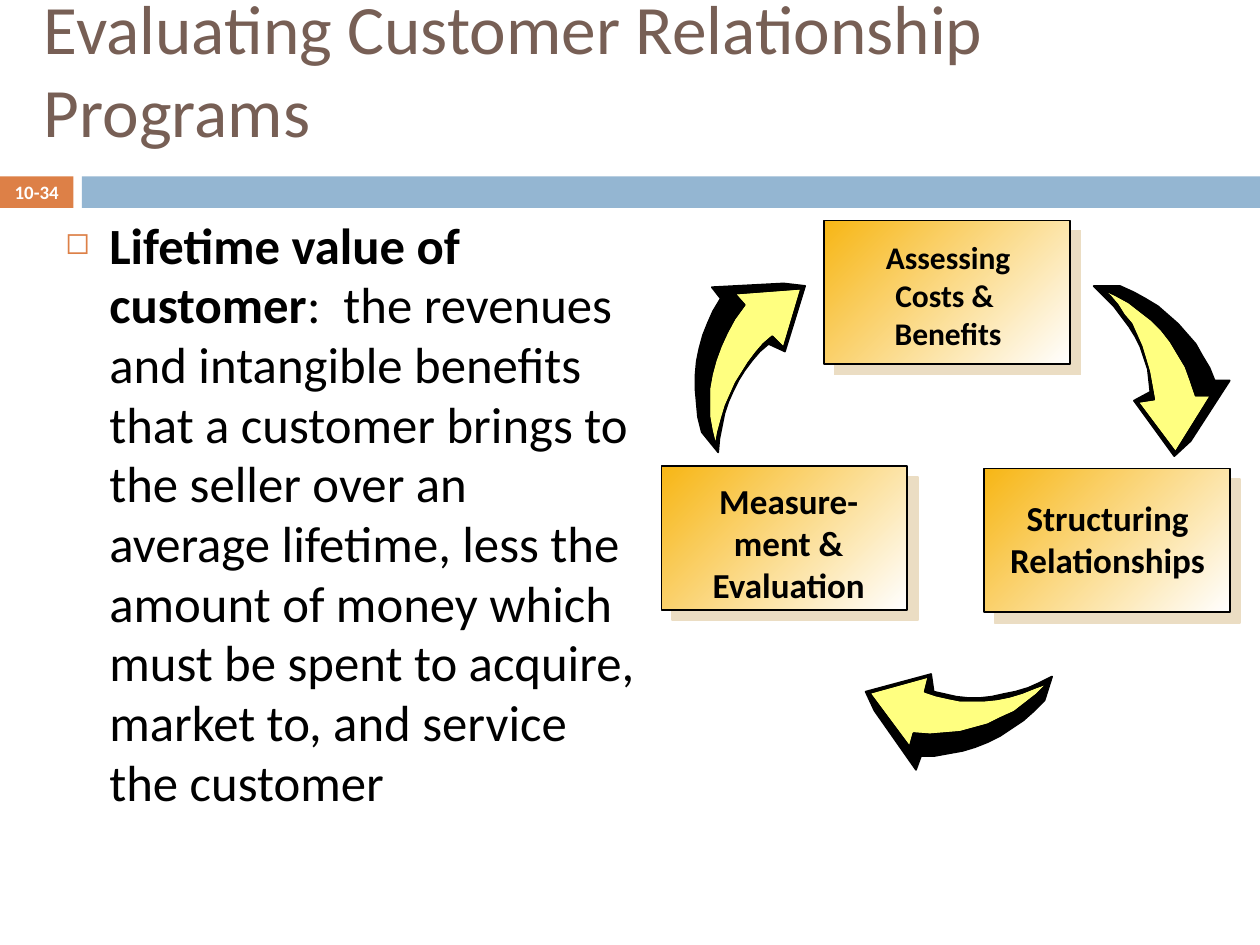
"""Build the slide on evaluating customer relationship programs."""
from dataclasses import dataclass

import pptx
import pptx.dml.color
import pptx.enum.shapes
import pptx.enum.text
import pptx.oxml
import pptx.oxml.ns
import pptx.util
from lxml import etree

Pt = pptx.util.Pt
RGBColor = pptx.dml.color.RGBColor
PP_ALIGN = pptx.enum.text.PP_ALIGN
MSO_ANCHOR = pptx.enum.text.MSO_ANCHOR
RECTANGLE = pptx.enum.shapes.MSO_SHAPE.RECTANGLE

ORANGE = RGBColor(0xDD, 0x80, 0x47)
BLUE = RGBColor(0x94, 0xB6, 0xD2)
BROWN = RGBColor(0x77, 0x5F, 0x55)
GOLD = RGBColor(0xF7, 0xB6, 0x15)
SAND = RGBColor(0xEB, 0xDD, 0xC3)
YELLOW = RGBColor(0xFF, 0xFF, 0x80)
WHITE = RGBColor(0xFF, 0xFF, 0xFF)
BLACK = RGBColor(0, 0, 0)

FONT = "Calibri"
CARD_WIDTH, CARD_HEIGHT = 140.4, 82.1
ARROW_UNIT = Pt(0.72)
CURVE_STEPS = 10
FACE_BENDS = (3, 5)
RIM_BENDS = (4, 7)

Point = tuple[float, float]
Box = tuple[float, float, float, float]


@dataclass(frozen=True)
class Stage:
    """A card of the cycle with its label."""
    left: float
    top: float
    label: str
    label_box: Box
    size: float


@dataclass(frozen=True)
class Arrow:
    """Corners and bend points of a curved arrow's face and of the rim around it."""
    face: list[Point]
    rim: list[Point]


STAGES = [
    Stage(562.3, 267.8, "Structuring\vRelationships", (560.2, 280.1, 145.4, 54.7), 20),
    Stage(378, 266.4, "Measure-\vment &\nEvaluation", (393.1, 270.7, 115.2, 79.2), 20),
    Stage(470.9, 126, "Assessing\vCosts & \vBenefits", (489.6, 132.5, 104.4, 72), 18),
]

ARROWS = [
    Arrow(face=[(933, 359), (903, 319), (916, 317), (902, 266),
                (874, 229), (922, 262), (949, 314), (961, 314)],
          rim=[(932, 362), (945, 350), (976, 302), (964, 302), (935, 257),
               (889, 227), (868, 227), (901, 267), (913, 311), (900, 318)]),
    Arrow(face=[(636, 229), (622, 276), (613, 267), (584, 304),
                (568, 354), (565, 297), (591, 242), (583, 233)],
          rim=[(639, 227), (622, 225), (565, 228), (572, 237), (553, 287),
               (557, 343), (570, 359), (582, 310), (610, 273), (623, 279)]),
    Arrow(face=[(690, 550), (737, 537), (734, 549), (781, 556),
                (832, 542), (784, 575), (725, 582), (722, 593)],
          rim=[(687, 549), (694, 564), (727, 611), (731, 600), (784, 589),
               (829, 556), (835, 537), (787, 553), (741, 549), (739, 535)]),
]


def trace(points: list[Point], bends: tuple[int, int]) -> list[Point]:
    """Return a closed outline with a parabola through each bend point."""
    outline: list[Point] = []
    for index, point in enumerate(points):
        if index not in bends:
            outline.append(point)
            continue
        before, after = points[index - 1], points[index + 1]
        for step in range(1, CURVE_STEPS):
            t = step / CURVE_STEPS
            weights = ((1 - t) * (1 - 2 * t), 4 * t * (1 - t), t * (2 * t - 1))
            outline.append(tuple(sum(w * value for w, value in zip(weights, axis))
                                 for axis in zip(before, point, after)))
    return outline + points[:1]


def add_rectangle(slide, box: Box, color: RGBColor | None = None):
    """Add a rectangle without shadow or line."""
    rectangle = slide.shapes.add_shape(RECTANGLE, *map(Pt, box))
    rectangle.shadow.inherit = False
    rectangle.line.fill.background()
    if color is not None:
        rectangle.fill.solid()
        rectangle.fill.fore_color.rgb = color
    return rectangle


def add_text(slide, box: Box, text: str, size: float, color: RGBColor, bold=False,
             align=PP_ALIGN.LEFT, anchor=MSO_ANCHOR.MIDDLE, wrap=True):
    """Add a text box in one font and return its text frame."""
    frame = slide.shapes.add_textbox(*map(Pt, box)).text_frame
    frame.word_wrap = wrap
    frame.vertical_anchor = anchor
    frame.text = text
    for paragraph in frame.paragraphs:
        paragraph.alignment = align
        font = paragraph.font
        font.name, font.size, font.bold = FONT, Pt(size), bold
        font.color.rgb = color
    return frame


def add_stage(slide, stage: Stage) -> None:
    """Draw a shaded card with its shadow and label."""
    card = add_rectangle(slide, (stage.left, stage.top, CARD_WIDTH, CARD_HEIGHT))
    card.fill.gradient()
    card.fill.gradient_angle = 315
    for stop, color in zip(card.fill.gradient_stops, (GOLD, WHITE)):
        stop.color.rgb = color
    card.line.color.rgb = BLACK
    card.line.width = Pt(1)
    effects = card.element.spPr.find(pptx.oxml.ns.qn("a:effectLst"))
    shadow = etree.SubElement(effects, pptx.oxml.ns.qn("a:outerShdw"), blurRad="0",
                              dist=str(Pt(8.5)), dir="2700000", algn="ctr", rotWithShape="0")
    etree.SubElement(shadow, pptx.oxml.ns.qn("a:srgbClr"), val=str(SAND))
    add_text(slide, stage.label_box, stage.label, stage.size, BLACK, bold=True,
             align=PP_ALIGN.CENTER, anchor=MSO_ANCHOR.TOP, wrap=False)


def add_arrow(slide, arrow: Arrow) -> None:
    """Draw the face of an arrow and then its rim."""
    face = trace(arrow.face, FACE_BENDS)
    rim = face + trace(arrow.rim, RIM_BENDS)
    for outline, color in ((face, YELLOW), (rim, BLACK)):
        builder = slide.shapes.build_freeform(*outline[0], scale=ARROW_UNIT)
        builder.add_line_segments(outline[1:], close=True)
        part = builder.convert_to_shape()
        part.shadow.inherit = False
        part.fill.solid()
        part.fill.fore_color.rgb = color
        part.line.color.rgb = BLACK
        part.line.width = Pt(1)


def add_definition(slide) -> None:
    """Write the bulleted definition with its term in bold."""
    frame = add_text(slide, (30.2, 120.2, 342, 396), "", 29, BLACK, anchor=MSO_ANCHOR.TOP)
    definition = frame.paragraphs[0]
    definition.space_before = Pt(7)
    definition.line_spacing = 0.98
    term = definition.add_run()
    term.text = "Lifetime value of customer"
    term.font.bold = True
    definition.add_run().text = (
        ":  the revenues and intangible benefits that a customer brings to the seller over "
        "an average lifetime, less the amount of money which must be spent to acquire, "
        "market to, and service the customer")
    properties = definition._p.get_or_add_pPr()
    properties.set("marL", str(Pt(25.2)))
    properties.set("indent", str(-Pt(25.2)))
    namespace = pptx.oxml.ns.nsdecls("a")
    bullet = (f'<a:buClr {namespace}><a:srgbClr val="{ORANGE}"/></a:buClr>',
              f'<a:buSzPct {namespace} val="60000"/>',
              f'<a:buChar {namespace} char="◻"/>')
    defaults = properties.find(pptx.oxml.ns.qn("a:defRPr"))
    for setting in bullet:
        defaults.addprevious(pptx.oxml.parse_xml(setting))


def main() -> None:
    """Build and save the slide."""
    presentation = pptx.Presentation()
    presentation.slide_width, presentation.slide_height = Pt(720), Pt(540)
    slide = presentation.slides.add_slide(presentation.slide_layouts[6])
    add_rectangle(slide, (0, 100.8, 42, 18), ORANGE)
    add_rectangle(slide, (46.8, 100.8, 673.2, 18), BLUE)
    add_text(slide, (18, 18, 702, 42), "Evaluating Customer Relationship Programs", 39.6, BROWN)
    add_text(slide, (0, 100.1, 42, 19.4), "10-34", 10.8, WHITE, bold=True,
             align=PP_ALIGN.CENTER)
    add_definition(slide)
    for arrow in ARROWS:
        add_arrow(slide, arrow)
    for stage in STAGES:
        add_stage(slide, stage)
    presentation.save("out.pptx")


if __name__ == "__main__":
    main()
